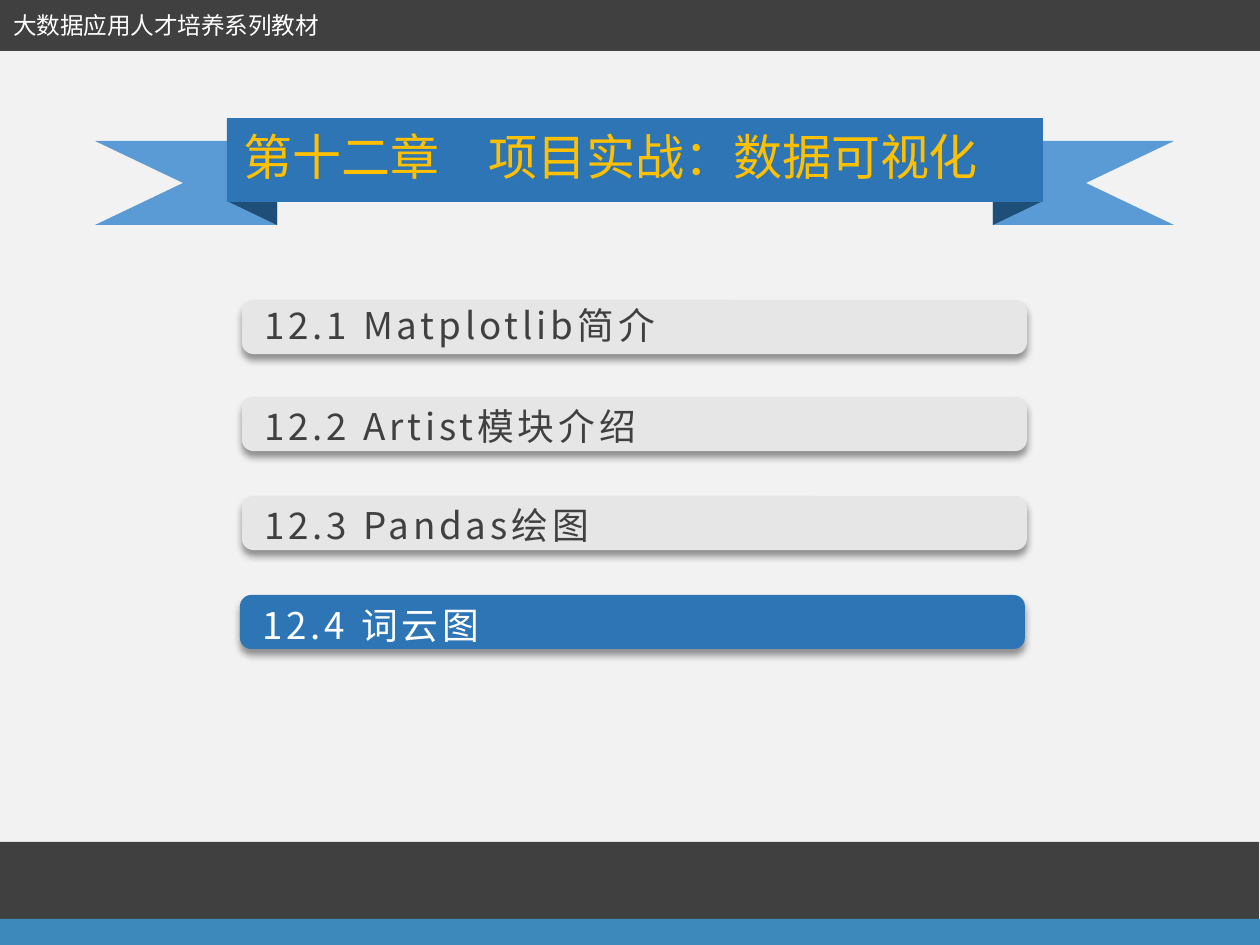
from lxml.etree import SubElement
from pptx import Presentation
from pptx.dml.color import RGBColor
from pptx.enum.shapes import MSO_SHAPE
from pptx.enum.text import MSO_AUTO_SIZE, PP_ALIGN
from pptx.oxml import parse_xml
from pptx.oxml.ns import nsdecls, qn
from pptx.util import Pt

SCALE = 914400 // 126
FONT = "Noto Sans CJK SC"
PAPER = RGBColor(0xF2, 0xF2, 0xF2)
CHARCOAL = RGBColor(0x40, 0x40, 0x40)
FOOTER_BLUE = RGBColor(0x3D, 0x89, 0xBC)
TAIL_BLUE = RGBColor(0x5B, 0x9B, 0xD5)
FOLD_BLUE = RGBColor(0x1F, 0x4E, 0x79)
BANNER_BLUE = RGBColor(0x2E, 0x75, 0xB6)
BAR_GRAY = RGBColor(0xE7, 0xE6, 0xE6)
GOLD = RGBColor(0xFF, 0xC0, 0x00)
WHITE = RGBColor(0xFF, 0xFF, 0xFF)
SHADOW = (
    f'<a:effectLst {nsdecls("a")}><a:outerShdw blurRad="50800" dist="38100" '
    'dir="5400000" algn="t" rotWithShape="0"><a:srgbClr val="000000">'
    '<a:alpha val="40000"/></a:srgbClr></a:outerShdw></a:effectLst>'
)

deck = Presentation()
deck.slide_width = 1260 * SCALE
deck.slide_height = 945 * SCALE
page = deck.slides.add_slide(deck.slide_layouts[6])
page.background.fill.solid()
page.background.fill.fore_color.rgb = PAPER


def add_block(kind, left, top, width, height, color):
    block = page.shapes.add_shape(kind, left * SCALE, top * SCALE, width * SCALE, height * SCALE)
    block.shadow.inherit = False
    block.fill.solid()
    block.fill.fore_color.rgb = color
    block.line.fill.background()
    return block


def add_label(text, left, top, width, height, size, color, align=PP_ALIGN.LEFT, spacing=0):
    box = page.shapes.add_textbox(left * SCALE, top * SCALE, width * SCALE, height * SCALE)
    box.text_frame.word_wrap = False
    box.text_frame.auto_size = MSO_AUTO_SIZE.SHAPE_TO_FIT_TEXT
    para = box.text_frame.paragraphs[0]
    para.alignment = align
    span = para.add_run()
    span.text = text
    span.font.size = Pt(size)
    span.font.name = FONT
    span.font.color.rgb = color
    properties = span.font._element
    SubElement(properties, qn("a:ea")).set("typeface", FONT)
    if spacing:
        properties.set("spc", str(spacing))


for outer, inner, notch in ((95, 277, 183), (1174, 993, 1086)):
    builder = page.shapes.build_freeform(outer, 141, scale=SCALE)
    builder.add_line_segments([(inner, 141), (inner, 225), (outer, 225), (notch, 183)], close=True)
    tail = builder.convert_to_shape()
    tail.shadow.inherit = False
    tail.fill.solid()
    tail.fill.fore_color.rgb = TAIL_BLUE
    tail.line.fill.background()

left_fold = add_block(MSO_SHAPE.RIGHT_TRIANGLE, 227, 201, 50, 24, FOLD_BLUE)
left_fold.rotation = 180
right_fold = add_block(MSO_SHAPE.RIGHT_TRIANGLE, 1006, 188, 24, 50, FOLD_BLUE)
right_fold.rotation = 90
add_block(MSO_SHAPE.RECTANGLE, 227, 118, 816, 84, BANNER_BLUE)
add_label("第十二章\u3000项目实战：数据可视化".replace("\u3000", "　"), 231, 120, 760, 72, 28, GOLD, PP_ALIGN.CENTER)

sections = [
    ("12.1 Matplotlib简介", 242, 300, 297, 433, BAR_GRAY, CHARCOAL),
    ("12.2 Artist模块介绍", 242, 397, 398, 411, BAR_GRAY, CHARCOAL),
    ("12.3 Pandas绘图", 242, 496, 497, 359, BAR_GRAY, CHARCOAL),
    ("12.4 词云图", 240, 595, 597, 251, BANNER_BLUE, WHITE),
]
for title, left, bar_top, text_top, text_width, bar_color, text_color in sections:
    bar = add_block(MSO_SHAPE.ROUNDED_RECTANGLE, left, bar_top, 785, 54, bar_color)
    bar.adjustments[0] = 0.21
    properties = bar._element.spPr
    properties.replace(properties.find(qn("a:effectLst")), parse_xml(SHADOW))
    add_label(title, left + 10, text_top, text_width, 57, 21, text_color, spacing=220)

add_block(MSO_SHAPE.RECTANGLE, -1, -1, 1262, 52, CHARCOAL)
add_block(MSO_SHAPE.RECTANGLE, -1, 842, 1260, 77, CHARCOAL)
add_block(MSO_SHAPE.RECTANGLE, 0, 919, 1260, 26, FOOTER_BLUE)
add_label("大数据应用人才培养系列教材", 1, 5, 335, 42, 13.5, WHITE)

deck.save("out.pptx")
